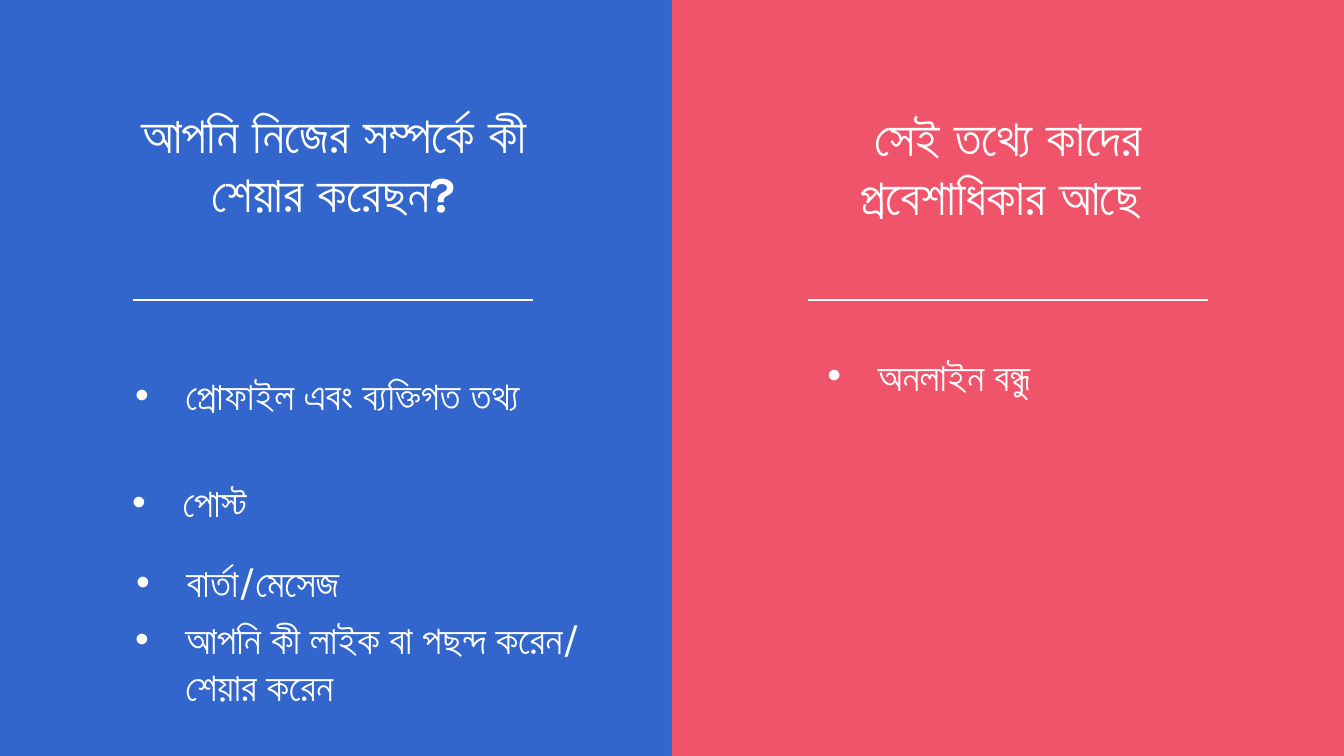
from dataclasses import dataclass

from lxml.etree import SubElement
from pptx import Presentation
from pptx.dml.color import RGBColor
from pptx.enum.shapes import MSO_CONNECTOR, MSO_SHAPE
from pptx.enum.text import MSO_ANCHOR, MSO_AUTO_SIZE, PP_ALIGN
from pptx.oxml.ns import qn
from pptx.util import Pt


@dataclass(frozen=True)
class Theme:
    blue: RGBColor = RGBColor(0x32, 0x66, 0xCC)
    coral: RGBColor = RGBColor(0xF0, 0x54, 0x6A)
    white: RGBColor = RGBColor(0xFF, 0xFF, 0xFF)
    font: str = "Karla"
    heading_size: float = 36
    bullet_size: float = 28
    rule_width: float = 1.5
    inset: float = 2.88
    indent: float = 36


@dataclass(frozen=True)
class Box:
    left: float
    top: float
    width: float
    height: float

    def within(self, outer):
        return Box(outer.left + self.left, outer.top + self.top, self.width, self.height)

    def lengths(self):
        return [Pt(value) for value in (self.left, self.top, self.width, self.height)]


THEME = Theme()
SLIDE_WIDTH, SLIDE_HEIGHT = 960, 540


def add_bullet(paragraph):
    properties = paragraph._p.get_or_add_pPr()
    properties.set("marL", str(Pt(THEME.indent)))
    properties.set("indent", str(-Pt(THEME.indent)))
    color = SubElement(properties, qn("a:buClr"))
    SubElement(color, qn("a:srgbClr"), val=str(THEME.white))
    SubElement(properties, qn("a:buFont"), typeface="Arial")
    SubElement(properties, qn("a:buChar"), char="•")


def add_text(slide, text, box, *, size, bold=False, bullet=False,
             alignment=PP_ALIGN.LEFT, line_spacing=None):
    shape = slide.shapes.add_textbox(*box.lengths())
    frame = shape.text_frame
    frame.word_wrap = True
    frame.auto_size = MSO_AUTO_SIZE.NONE
    frame.vertical_anchor = MSO_ANCHOR.MIDDLE
    frame.margin_left = frame.margin_right = Pt(THEME.inset)
    frame.margin_top = frame.margin_bottom = Pt(THEME.inset)
    paragraph = frame.paragraphs[0]
    paragraph.alignment = alignment
    if line_spacing:
        paragraph.line_spacing = line_spacing
    if bullet:
        add_bullet(paragraph)
    run = paragraph.add_run()
    run.text = text
    run.font.name = THEME.font
    run.font.size = Pt(size)
    run.font.bold = bold
    run.font.color.rgb = THEME.white


def add_rule(slide, box):
    left, top, width, height = box.lengths()
    rule = slide.shapes.add_connector(
        MSO_CONNECTOR.STRAIGHT, left, top, left + width, top + height)
    rule.line.color.rgb = THEME.white
    rule.line.width = Pt(THEME.rule_width)
    SubElement(rule._element.spPr, qn("a:effectLst"))


def add_panel(slide, box, color, heading, heading_box, rule_box, bullets):
    panel = slide.shapes.add_shape(MSO_SHAPE.RECTANGLE, *box.lengths())
    panel.shadow.inherit = False
    panel.fill.solid()
    panel.fill.fore_color.rgb = color
    panel.line.fill.background()
    add_text(slide, heading, heading_box.within(box), size=THEME.heading_size,
             bold=True, alignment=PP_ALIGN.CENTER, line_spacing=0.97)
    add_rule(slide, rule_box.within(box))
    for text, bullet_box in bullets:
        add_text(slide, text, bullet_box.within(box),
                 size=THEME.bullet_size, bullet=True)


def main():
    presentation = Presentation()
    presentation.slide_width = Pt(SLIDE_WIDTH)
    presentation.slide_height = Pt(SLIDE_HEIGHT)
    slide = presentation.slides.add_slide(presentation.slide_layouts[6])
    half = SLIDE_WIDTH / 2

    add_panel(
        slide, Box(0, 0, half, SLIDE_HEIGHT), THEME.blue,
        "আপনি নিজের সম্পর্কে কী শেয়ার করেছন?",
        Box(91.5, 62.5, 294, 111.5), Box(95, 214.5, 286, 0),
        [
            ("প্রোফাইল এবং ব্যক্তিগত তথ্য", Box(93.6, 245.5, 289, 73.5)),
            ("পোস্ট", Box(91.5, 338.5, 185, 39.5)),
            ("বার্তা/মেসেজ", Box(94.3, 396, 249, 39.5)),
            ("আপনি কী লাইক বা পছন্দ করেন/ শেয়ার করেন", Box(93.6, 436.3, 373.7, 73.5)),
        ])
    add_panel(
        slide, Box(half, 0, half, SLIDE_HEIGHT), THEME.coral,
        "সেই তথ্যে কাদের প্রবেশাধিকার আছে ",
        Box(88.8, 82, 302.4, 76.3), Box(97, 214.5, 286, 0),
        [("অনলাইন বন্ধু", Box(108.2, 248.4, 263.5, 39.5))])

    presentation.save("out.pptx")


if __name__ == "__main__":
    main()
